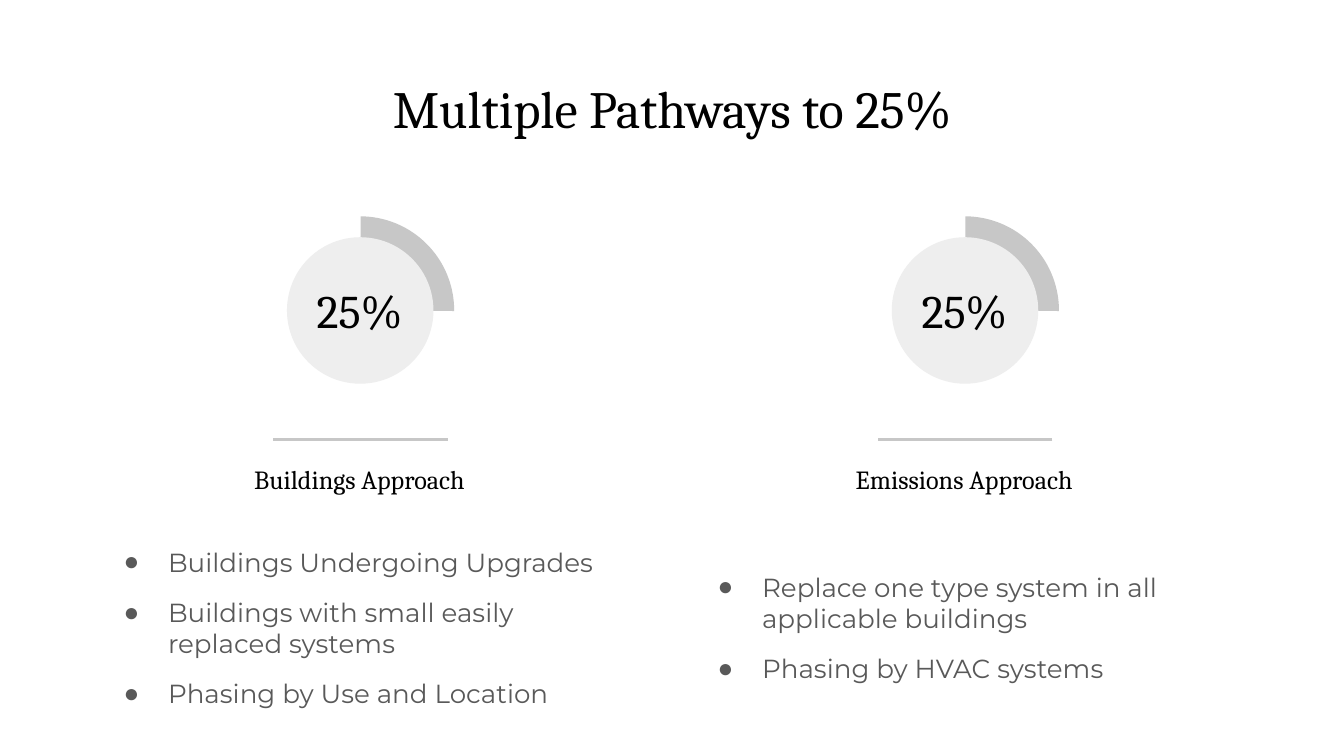
"""Build a slide that compares two pathways to 25%."""
from lxml import etree
from pptx import Presentation, util as u
from pptx.dml.color import RGBColor
from pptx.enum import shapes, text
from pptx.oxml.ns import qn

COLORS = {"ink": "000000", "body": "595959", "arc": "C7C7C7", "disc": "EEEEEE"}
PATHWAYS = [
    {"label": "Buildings Approach", "label_left": 1.7, "label_width": 1.95,
     "list_left": 0.65, "list_width": 4.13,
     "points": ["Buildings Undergoing Upgrades",
                "Buildings with small easily replaced systems",
                "Phasing by Use and Location"]},
    {"label": "Emissions Approach", "label_left": 6.04, "label_width": 2.27,
     "list_left": 5.07, "list_width": 4.21,
     "points": ["Replace one type system in all applicable buildings",
                "Phasing by HVAC systems"]},
]


def prepare(box, left, top, width, height, anchor=text.MSO_ANCHOR.MIDDLE):
    box.left, box.top = u.Inches(left), u.Inches(top)
    box.width, box.height = u.Inches(width), u.Inches(height)
    frame = box.text_frame
    frame.word_wrap = True
    frame.auto_size = text.MSO_AUTO_SIZE.NONE
    frame.vertical_anchor = anchor
    frame.margin_left = frame.margin_right = u.Inches(0.1)
    frame.margin_top = frame.margin_bottom = u.Inches(0.1)
    return frame


def write(para, words, size, font="Cambria", color="ink", align=text.PP_ALIGN.CENTER):
    para.alignment = align
    span = para.add_run()
    span.text = words
    span.font.name = font
    span.font.size = u.Pt(size)
    span.font.color.rgb = RGBColor.from_string(COLORS[color])


deck = Presentation()
deck.slide_width = u.Inches(10)
deck.slide_height = deck.slide_width * 9 // 16
page = deck.slides.add_slide(deck.slide_layouts.get_by_name("Two Content"))

title = prepare(page.shapes.title, 0.78, 0.47, 8.44, 0.63, text.MSO_ANCHOR.TOP)
write(title.paragraphs[0], "Multiple Pathways to 25%", 28)

for index, pathway in enumerate(PATHWAYS):
    shift = 4.5 * index
    center = 2.68 + shift

    gauge = page.shapes.add_group_shape()
    for kind, size, color in [(shapes.MSO_SHAPE.PIE, 1.4, "arc"),
                              (shapes.MSO_SHAPE.OVAL, 1.09, "disc")]:
        part = gauge.shapes.add_shape(kind, u.Inches(center - size / 2), u.Inches(2.31 - size / 2),
                                      u.Inches(size), u.Inches(size))
        part.shadow.inherit = False
        part.fill.solid()
        part.fill.fore_color.rgb = RGBColor.from_string(COLORS[color])
        part.line.fill.background()
        if color == "arc":
            part.adjustments[0], part.adjustments[1] = 162.19, 0.24

    for words, size, left, top, width, height in [
        ("25%", 25, 2.13 + shift, 2.17, 1.09, 0.27),
        (pathway["label"], 14, pathway["label_left"], 3.44, pathway["label_width"], 0.25),
    ]:
        box = page.shapes.add_textbox(0, 0, 0, 0)
        write(prepare(box, left, top, width, height).paragraphs[0], words, size)

    rule = page.shapes.add_connector(shapes.MSO_CONNECTOR.STRAIGHT, u.Inches(center + 0.65),
                                     u.Inches(3.27), u.Inches(center - 0.65), u.Inches(3.27))
    rule.line.color.rgb = RGBColor.from_string(COLORS["arc"])
    rule.line.width = u.Pt(1.5)
    etree.SubElement(rule._element.spPr, qn("a:effectLst"))

    frame = prepare(page.placeholders[index + 1], pathway["list_left"], 3.97,
                    pathway["list_width"], 1.4)
    for number, point in enumerate(pathway["points"]):
        para = frame.add_paragraph() if number else frame.paragraphs[0]
        props = para._p.get_or_add_pPr()
        props.set("marL", str(u.Inches(0.5)))
        props.set("indent", str(u.Inches(-0.33)))
        bullet_color = etree.SubElement(props, qn("a:buClr"))
        etree.SubElement(bullet_color, qn("a:srgbClr"), val=COLORS["body"])
        etree.SubElement(props, qn("a:buChar"), char="●")
        para.space_before = u.Pt(10 if number else 0)
        para.space_after = u.Pt(10 if point == pathway["points"][-1] else 0)
        write(para, point, 14, "Montserrat", "body", text.PP_ALIGN.LEFT)

deck.save("out.pptx")
